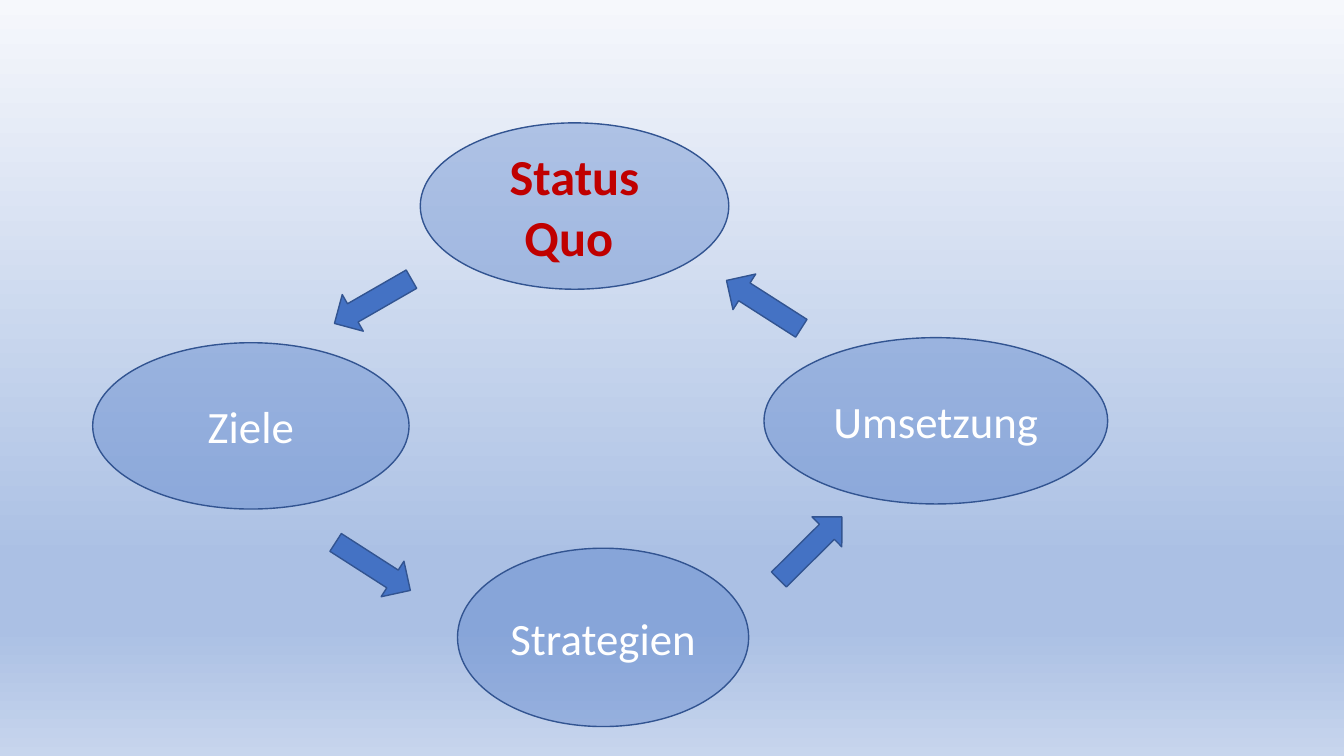
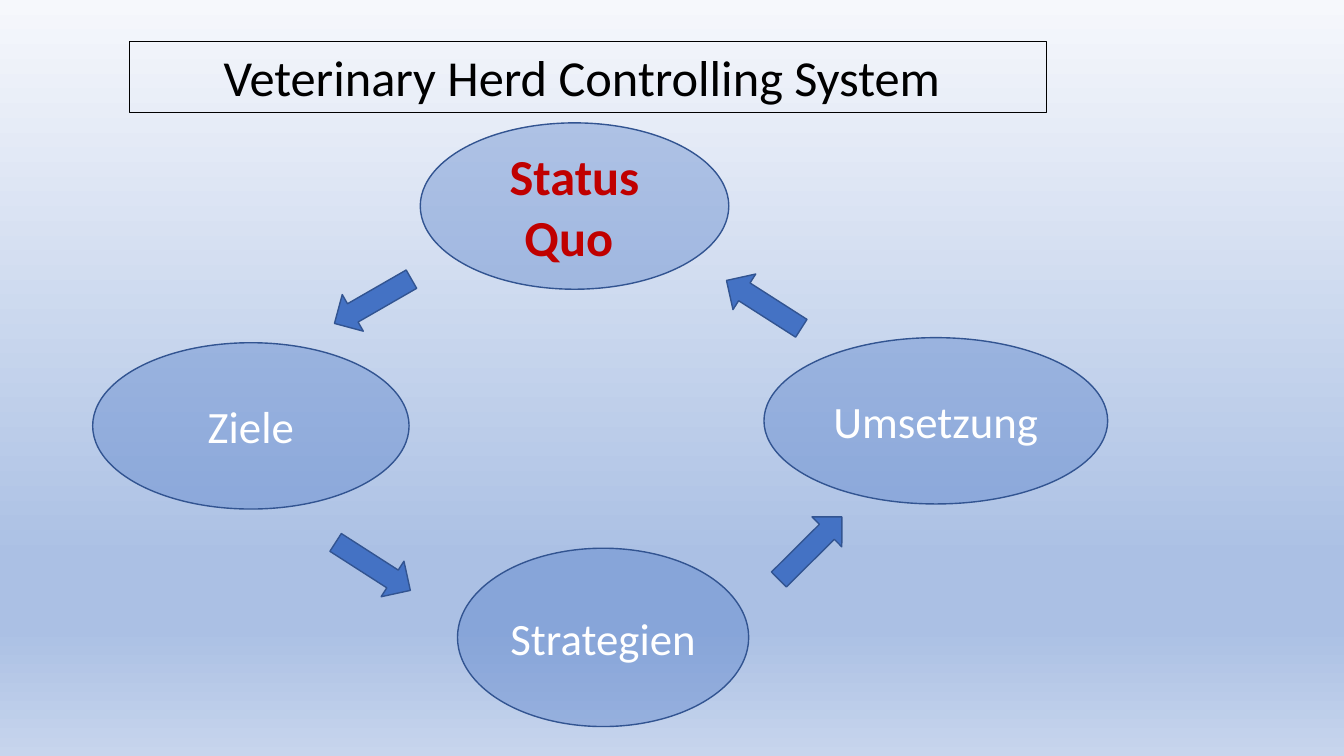
from dataclasses import dataclass

from lxml import etree
from pptx import Presentation
from pptx.dml.color import RGBColor
from pptx.enum.shapes import MSO_SHAPE
from pptx.enum.text import MSO_ANCHOR, MSO_AUTO_SIZE, PP_ALIGN
from pptx.oxml.ns import qn
from pptx.util import Pt

ELLIPSE, ARROW = MSO_SHAPE.OVAL, MSO_SHAPE.RIGHT_ARROW
CENTER, MIDDLE, TOP = PP_ALIGN.CENTER, MSO_ANCHOR.MIDDLE, MSO_ANCHOR.TOP
GROW = MSO_AUTO_SIZE.SHAPE_TO_FIT_TEXT
BLANK_LAYOUT = 6


@dataclass(frozen=True)
class Theme:
    font: str = "Calibri"
    blue: str = "4472C4"
    outline: str = "325491"
    black: str = "000000"
    white: str = "FFFFFF"
    red: str = "C00000"
    large: int = 36
    medium: int = 32
    shape_line: float = 1
    title_line: float = 0.75
    stage_opacity: int = 34
    # Percent of the slide height, colour
    backdrop: tuple = ((0, "F6F8FC"), (74, "ABC0E4"), (83, "ABC0E4"), (100, "C7D5ED"))


THEME = Theme()

SLIDE_SIZE = (960, 540)
TITLE_BOX = (92.2, 29.5, 655.2, 51.1)
CYCLE_ORIGIN = (66.2, 87.8)

# Left, top, width, height within the cycle
STAGES = (
    ("Ziele", (0, 157, 226, 118.8)),
    ("Strategien", (260.6, 303.8, 208, 127.4)),
    ("Umsetzung", (479.5, 153.4, 245.5, 118.8)),
)
CURRENT_STAGE = ("Status Quo ", (234, 0, 220.4, 118.8))

# Left, top within the cycle, rotation
ARROW_SIZE = (63.4, 30.2)
ARROWS = (
    (168.5, 112.3, 150.1),
    (168.5, 301.7, 32.7),
    (481, 288.7, 315.2),
    (447.8, 114.5, 212.6),
)


def points(values):
    return [Pt(value) for value in values]


def rgb(color):
    return RGBColor.from_string(color)


def set_backdrop(master):
    """Give all slides the vertical gradient through their master."""
    fill = master.background.fill
    fill.gradient()
    fill.gradient_angle = 270
    stops = master.element.xpath("p:cSld/p:bg//a:gsLst")[0]
    for stop in list(stops):
        stops.remove(stop)
    for percent, color in THEME.backdrop:
        stop = etree.SubElement(stops, qn("a:gs"), pos=str(percent * 1000))
        etree.SubElement(stop, qn("a:srgbClr"), val=color)


def set_line(shape, color, width):
    shape.line.color.rgb = rgb(color)
    shape.line.width = Pt(width)


def write(shape, text, size, color, anchor, bold=False):
    frame = shape.text_frame
    frame.word_wrap = True
    frame.vertical_anchor = anchor
    paragraph = frame.paragraphs[0]
    paragraph.text = text
    paragraph.alignment = CENTER
    font = paragraph.font
    font.name, font.size, font.bold = THEME.font, Pt(size), bold
    font.color.rgb = rgb(color)


def add_blue_shape(slide, preset, box):
    shape = slide.shapes.add_shape(preset, *points(box))
    shape.shadow.inherit = False
    shape.fill.solid()
    shape.fill.fore_color.rgb = rgb(THEME.blue)
    set_line(shape, THEME.outline, THEME.shape_line)
    return shape


def add_stage(slide, text, box, size, color, bold=False):
    stage = add_blue_shape(slide, ELLIPSE, box)
    fill_color = stage.element.xpath("p:spPr/a:solidFill/a:srgbClr")[0]
    etree.SubElement(fill_color, qn("a:alpha"), val=str(THEME.stage_opacity * 1000))
    write(stage, text, size, color, MIDDLE, bold)


def add_cycle(slide, origin):
    """Draw the four stages and the arrows between them."""
    left, top = origin

    def placed(x, y, width, height):
        return left + x, top + y, width, height

    name, box = CURRENT_STAGE
    add_stage(slide, name, placed(*box), THEME.large, THEME.red, bold=True)
    for name, box in STAGES:
        add_stage(slide, name, placed(*box), THEME.medium, THEME.white)
    for x, y, rotation in ARROWS:
        arrow = add_blue_shape(slide, ARROW, placed(x, y, *ARROW_SIZE))
        arrow.rotation = rotation


def add_title(slide, text, box):
    title = slide.shapes.add_textbox(*points(box))
    set_line(title, THEME.black, THEME.title_line)
    write(title, text, THEME.large, THEME.black, TOP)
    title.text_frame.auto_size = GROW


def add_cycle_slide(prs, title=None):
    slide = prs.slides.add_slide(prs.slide_layouts[BLANK_LAYOUT])
    if title:
        add_title(slide, title, TITLE_BOX)
    add_cycle(slide, CYCLE_ORIGIN)


def main():
    prs = Presentation()
    prs.slide_width, prs.slide_height = points(SLIDE_SIZE)
    set_backdrop(prs.slide_master)
    add_cycle_slide(prs)
    add_cycle_slide(prs, "Veterinary Herd Controlling System ")
    prs.save("out.pptx")


if __name__ == "__main__":
    main()
